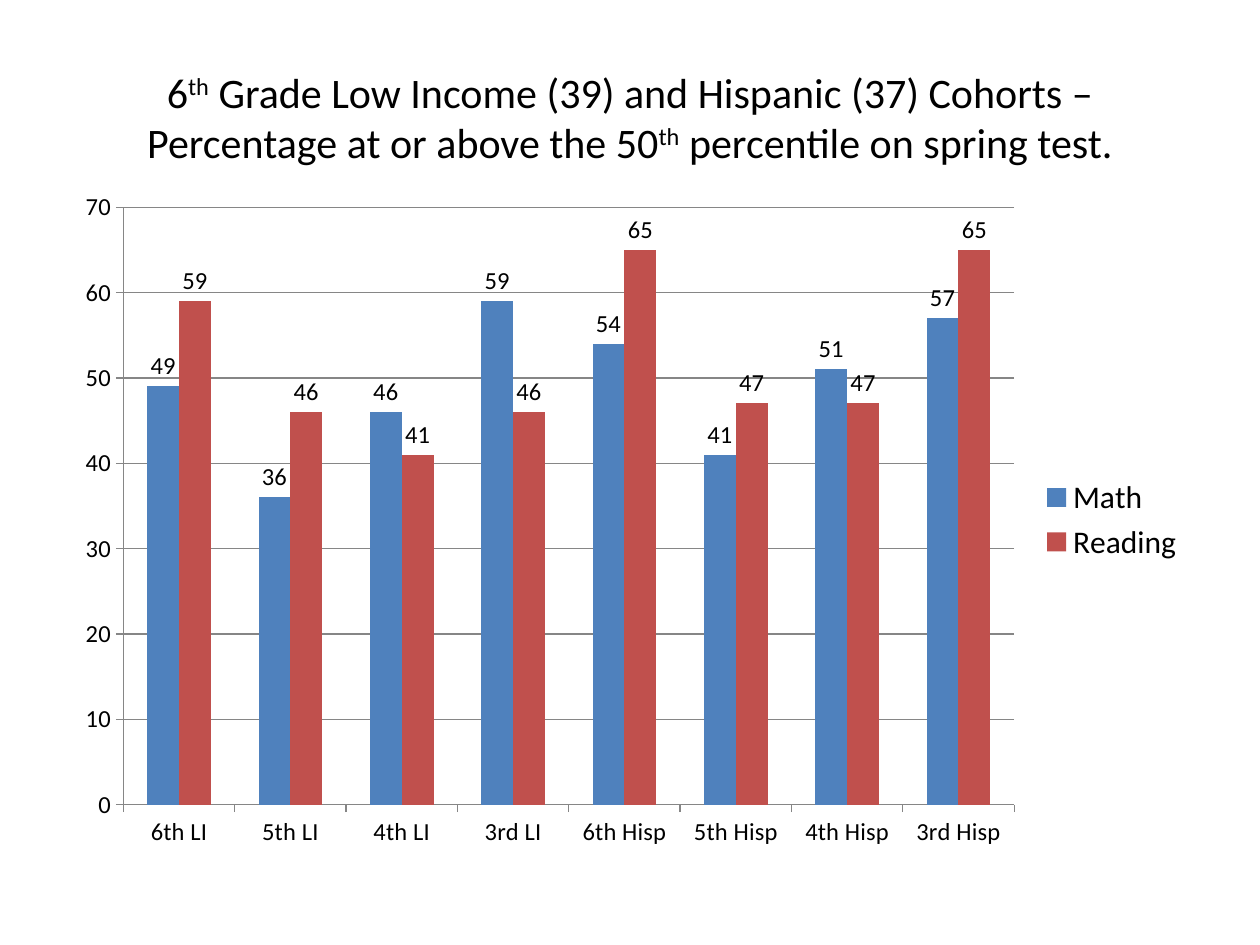
from pptx import Presentation
from pptx.chart.data import CategoryChartData
from pptx.dml.color import RGBColor
from pptx.enum.chart import XL_CHART_TYPE, XL_LABEL_POSITION, XL_LEGEND_POSITION, XL_TICK_MARK
from pptx.enum.text import MSO_ANCHOR, PP_ALIGN
from pptx.util import Pt

COLUMN = XL_CHART_TYPE.COLUMN_CLUSTERED
ABOVE = XL_LABEL_POSITION.OUTSIDE_END
RIGHT = XL_LEGEND_POSITION.RIGHT
OUT, NONE = XL_TICK_MARK.OUTSIDE, XL_TICK_MARK.NONE
MIDDLE, CENTER = MSO_ANCHOR.MIDDLE, PP_ALIGN.CENTER

BLACK = RGBColor(0x00, 0x00, 0x00)
GRAY = RGBColor(0x86, 0x86, 0x86)
BLUE = RGBColor(0x4F, 0x81, 0xBD)
RED = RGBColor(0xC0, 0x50, 0x4D)
FACE = "Calibri"

# (text, raised)
TITLE = [
    ("6", False),
    ("th", True),
    (" Grade Low Income (39) and Hispanic (37) Cohorts – "
     "Percentage at or above the 50", False),
    ("th", True),
    (" percentile on spring test.", False),
]
GROUPS = ["6th LI", "5th LI", "4th LI", "3rd LI",
          "6th Hisp", "5th Hisp", "4th Hisp", "3rd Hisp"]
SCORES = [
    ("Math", BLUE, [49, 36, 46, 59, 54, 41, 51, 57]),
    ("Reading", RED, [59, 46, 41, 46, 65, 47, 47, 65]),
]
TITLE_BOX = (36, 21.6, 648, 90)
CHART_BOX = (36, 102, 648, 390)


def style(font, size):
    look = {"name": FACE, "size": Pt(size), "bold": False}
    for key, value in look.items():
        setattr(font, key, value)
    font.color.rgb = BLACK


def add_title(slide):
    title = slide.shapes.title
    for side, value in zip(("left", "top", "width", "height"), TITLE_BOX):
        setattr(title, side, Pt(value))
    frame = title.text_frame
    frame.word_wrap = True
    frame.vertical_anchor = MIDDLE
    para = frame.paragraphs[0]
    para.alignment = CENTER
    for text, raised in TITLE:
        run = para.add_run()
        run.text = text
        style(run.font, 24)
        if raised:
            run.font._element.set("baseline", "30000")


def add_scores(slide):
    data = CategoryChartData()
    data.categories = GROUPS
    for name, _, values in SCORES:
        data.add_series(name, values)
    box = [Pt(value) for value in CHART_BOX]
    chart = slide.shapes.add_chart(COLUMN, *box, data).chart
    chart.has_title = False
    style(chart.font, 18)

    chart.has_legend = True
    chart.legend.position = RIGHT
    chart.legend.include_in_layout = False
    style(chart.legend.font, 18)

    for axis in (chart.category_axis, chart.value_axis):
        axis.major_tick_mark = OUT
        axis.minor_tick_mark = NONE
        style(axis.tick_labels.font, 14)
        axis.format.line.color.rgb = GRAY
        axis.format.line.width = Pt(0.75)
    scale = chart.value_axis
    scale.minimum_scale, scale.maximum_scale, scale.major_unit = 0, 70, 10
    scale.has_major_gridlines = True
    grid = scale.major_gridlines.format.line
    grid.color.rgb = GRAY
    grid.width = Pt(0.75)

    plot = chart.plots[0]
    plot.gap_width = 150
    plot.overlap = 0
    plot.vary_by_categories = False
    for bars, (_, color, _) in zip(plot.series, SCORES):
        bars.format.fill.solid()
        bars.format.fill.fore_color.rgb = color
        bars.invert_if_negative = False
        labels = bars.data_labels
        labels.show_value = True
        labels.position = ABOVE
        style(labels.font, 14)


def main():
    deck = Presentation()
    deck.slide_width, deck.slide_height = Pt(720), Pt(540)
    slide = deck.slides.add_slide(deck.slide_layouts[5])
    add_title(slide)
    add_scores(slide)
    deck.save("out.pptx")


if __name__ == "__main__":
    main()
